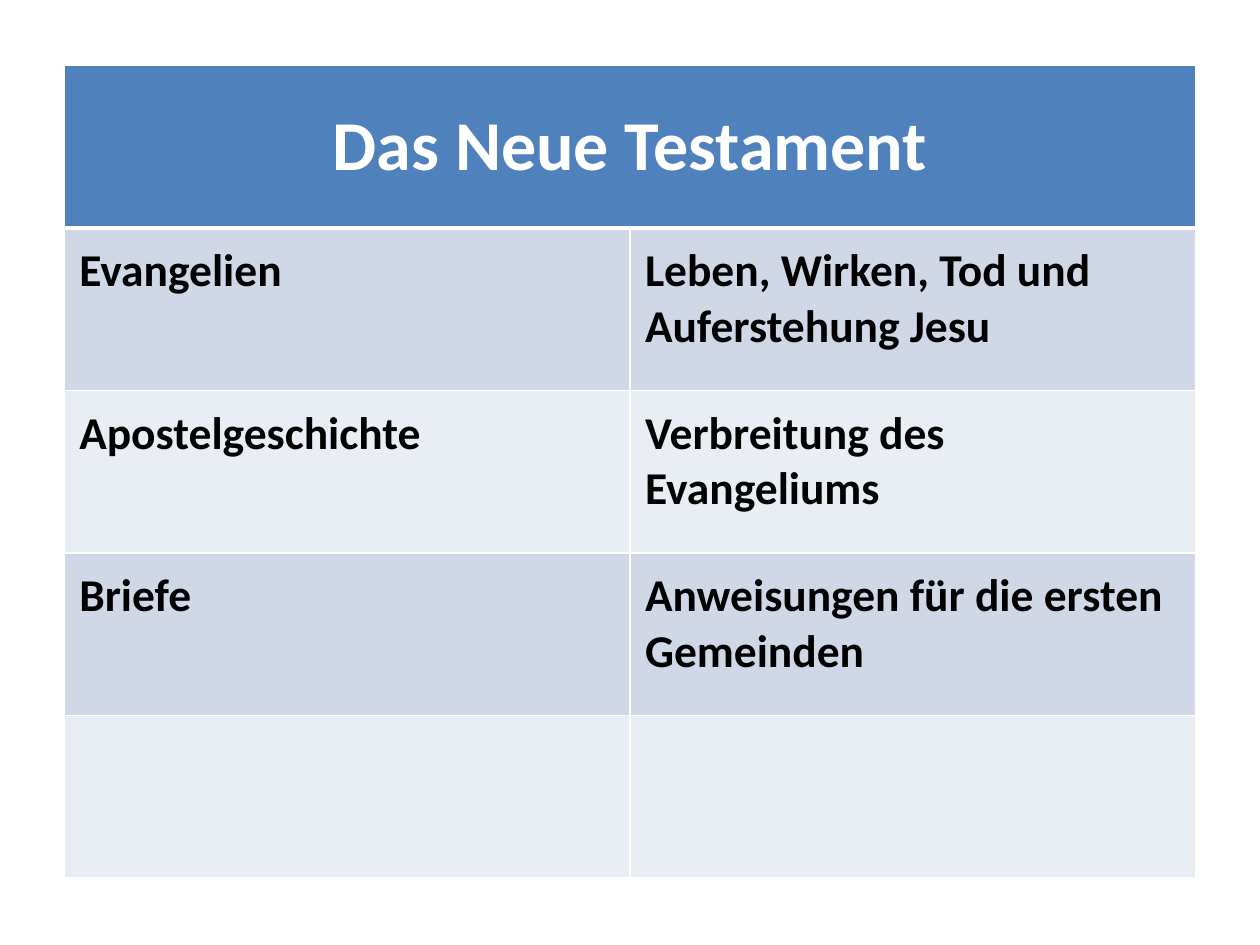
from dataclasses import dataclass

from lxml import etree
from pptx import Presentation
from pptx.dml.color import RGBColor
from pptx.enum.text import MSO_ANCHOR, PP_ALIGN
from pptx.oxml.ns import qn
from pptx.table import _Cell
from pptx.util import Inches, Pt

CENTER, LEFT = PP_ALIGN.CENTER, PP_ALIGN.LEFT
MIDDLE, TOP = MSO_ANCHOR.MIDDLE, MSO_ANCHOR.TOP

WHITE = RGBColor(0xFF, 0xFF, 0xFF)
BLACK = RGBColor(0x00, 0x00, 0x00)
HEADER_BLUE = RGBColor(0x4F, 0x81, 0xBD)
BANDS = (RGBColor(0xD0, 0xD8, 0xE8), RGBColor(0xE9, 0xED, 0xF4))

COLUMN_WIDTH = Inches(4.49)
ROW_HEIGHT = Inches(1.29)


@dataclass(frozen=True)
class BookGroup:
    name: str = ""
    content: str = ""


GROUPS = (
    BookGroup("Evangelien", "Leben, Wirken, Tod und Auferstehung Jesu"),
    BookGroup("Apostelgeschichte", "Verbreitung des Evangeliums"),
    BookGroup("Briefe", "Anweisungen für die ersten Gemeinden"),
    BookGroup(),
)


def write_text(cell: _Cell, text: str, *, size: float, color: RGBColor,
               align: PP_ALIGN = LEFT, anchor: MSO_ANCHOR = TOP) -> None:
    cell.vertical_anchor = anchor
    para = cell.text_frame.paragraphs[0]
    para.alignment = align
    span = para.add_run()
    span.text = text
    span.font.name = "Calibri"
    span.font.size = Pt(size)
    span.font.bold = True
    span.font.color.rgb = color


def paint_cell(cell: _Cell, fill: RGBColor, *, top: float = 1, bottom: float = 1) -> None:
    """Set white borders, with widths in points, and a solid fill."""
    properties = cell._tc.get_or_add_tcPr()
    for side, width in (("L", 1), ("R", 1), ("T", top), ("B", bottom)):
        line = etree.SubElement(properties, qn(f"a:ln{side}"), w=str(Pt(width)))
        solid = etree.SubElement(line, qn("a:solidFill"))
        etree.SubElement(solid, qn("a:srgbClr"), val=str(WHITE))
    cell.fill.solid()
    cell.fill.fore_color.rgb = fill


def set_margins(cell: _Cell) -> None:
    cell.margin_left = cell.margin_top = Inches(0.12)
    cell.margin_right = Inches(0.16)
    cell.margin_bottom = Inches(0.08)


def main() -> None:
    deck = Presentation()
    deck.slide_width, deck.slide_height = Inches(10), Inches(7.5)
    page = deck.slides.add_slide(deck.slide_layouts[6])

    # Table grid
    row_count = len(GROUPS) + 1
    table = page.shapes.add_table(row_count, 2, Inches(0.51), Inches(0.52),
                                  2 * COLUMN_WIDTH, row_count * ROW_HEIGHT).table
    for column in table.columns:
        column.width = COLUMN_WIDTH
    for row in table.rows:
        row.height = ROW_HEIGHT

    # Header across both columns
    header = table.cell(0, 0)
    header.merge(table.cell(0, 1))
    for cell in table.rows[0].cells:
        paint_cell(cell, HEADER_BLUE, bottom=3)
    write_text(header, "Das Neue Testament", size=40, color=WHITE,
               align=CENTER, anchor=MIDDLE)

    # Banded rows
    for index, group in enumerate(GROUPS):
        for column, text in enumerate((group.name, group.content)):
            cell = table.cell(index + 1, column)
            paint_cell(cell, BANDS[index % 2], top=3 if index == 0 else 1)
            if text:
                set_margins(cell)
                write_text(cell, text, size=26, color=BLACK)

    deck.save("out.pptx")


if __name__ == "__main__":
    main()
